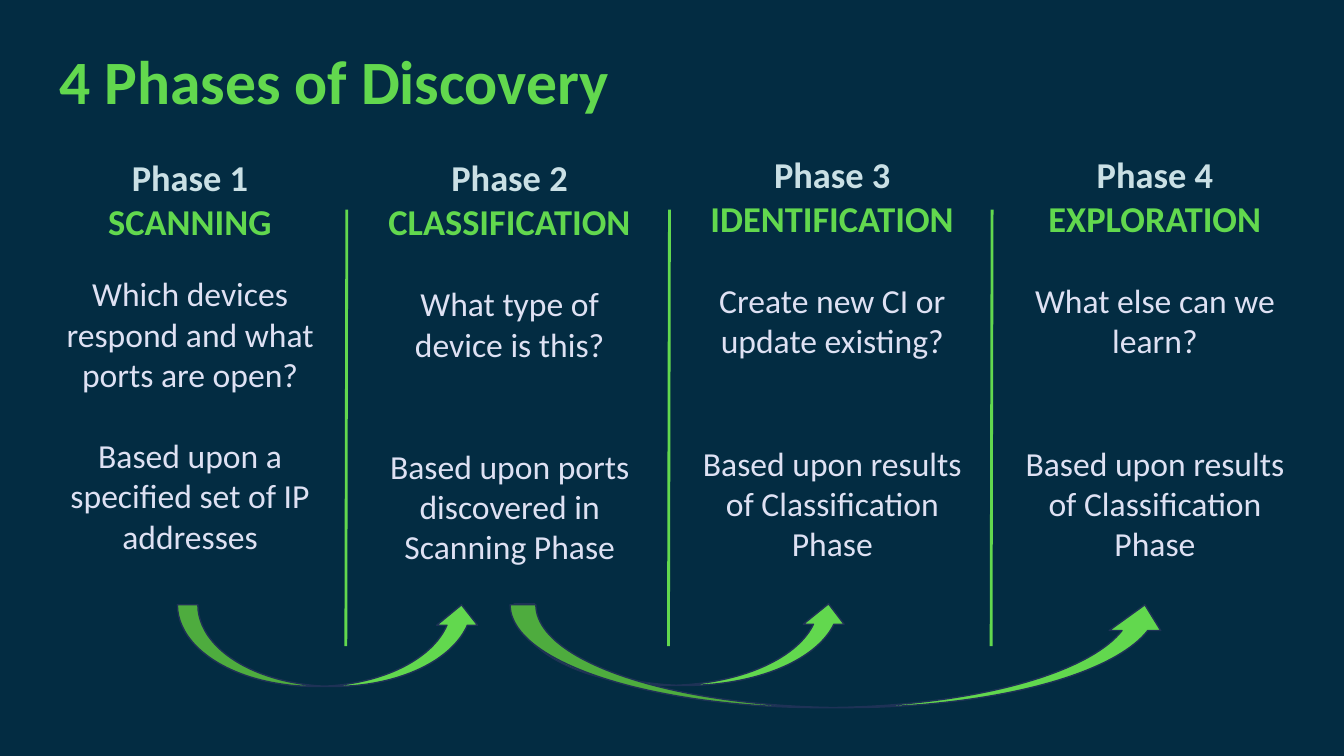
from lxml.etree import SubElement
from pptx import Presentation
from pptx.dml.color import RGBColor
from pptx.enum.shapes import MSO_CONNECTOR as Link, MSO_SHAPE as Form
from pptx.enum.text import PP_ALIGN as Align
from pptx.oxml.ns import qn
from pptx.util import Inches, Pt

GREEN, PALE, LILAC = "62D84E", "CAE0E5", "DEE1F3"
NAVY, EDGE = "032C42", "1E3256"

# left, top inset, name, question, basis, space before question and basis
PHASES = [
    (0.49, 0.08, "SCANNING", "Which devices respond and what ports are open?",
     "Based upon a specified set of IP addresses", 22, 29),
    (3.66, 0.08, "CLASSIFICATION", "What type of device is this?",
     "Based upon ports discovered in Scanning Phase", 29, 58.5),
    (6.86, 0.05, "IDENTIFICATION", "Create new CI or update existing?",
     "Based upon results of Classification Phase", 29, 58.5),
    (10.06, 0.05, "EXPLORATION", "What else can we learn?",
     "Based upon results of Classification Phase", 29, 58.5),
]
ARROWS = [(1.76, 6, 3.02, 0.81), (5.1, 5.99, 3.32, 0.81), (5.06, 6, 6.55, 1.02)]


def color(code):
    return RGBColor.from_string(code)


def add_box(slide, left, top, width, height, inset=0.05):
    box = slide.shapes.add_textbox(*map(Inches, (left, top, width, height)))
    frame = box.text_frame
    frame.word_wrap = True
    frame.margin_top = Inches(inset)
    return frame


def add_run(para, text, size, code, bold=False):
    run = para.add_run()
    run.text = text
    font = run.font
    font.name, font.size, font.bold = "Calibri", Pt(size), bold
    font.color.rgb = color(code)


def add_title(slide, text):
    para = add_box(slide, 0.49, 0.46, 5.78, 0.81).paragraphs[0]
    para.line_spacing = 0.9
    add_run(para, text, 44, GREEN, True)


def add_phase(slide, number, left, inset, name, question, basis, gap, rest):
    frame = add_box(slide, left, 1.46, 2.79, 5.37, inset)
    lines = [
        (f"Phase {number}", 26, PALE, True, 0),
        (name, 26, GREEN, True, 0),
        (question, 24, LILAC, False, gap),
        (basis, 24, LILAC, False, rest),
    ]
    for index, (text, size, code, bold, space) in enumerate(lines):
        para = frame.add_paragraph() if index else frame.paragraphs[0]
        para.alignment = Align.CENTER
        para.space_before = Pt(space)
        add_run(para, text, size, code, bold)


def add_rule(slide, left):
    ends = map(Inches, (left, 2.08, left - 0.01, 6.41))
    rule = slide.shapes.add_connector(Link.STRAIGHT, *ends)
    rule.line.color.rgb = color(GREEN)
    rule.line.width = Pt(2)
    SubElement(rule.element.spPr, qn("a:effectLst"))


def add_arrow(slide, *place):
    arrow = slide.shapes.add_shape(Form.CURVED_UP_ARROW, *map(Inches, place))
    arrow.shadow.inherit = False
    arrow.fill.solid()
    arrow.fill.fore_color.rgb = color(GREEN)
    arrow.line.color.rgb = color(EDGE)
    arrow.line.width = Pt(1)


def main():
    deck = Presentation()
    deck.slide_width, deck.slide_height = Inches(13.33), Inches(7.5)
    slide = deck.slides.add_slide(deck.slide_layouts[6])
    fill = slide.background.fill
    fill.solid()
    fill.fore_color.rgb = color(NAVY)

    add_title(slide, "4 Phases of Discovery")
    for number, phase in enumerate(PHASES, 1):
        add_phase(slide, number, *phase)
    for index in range(len(PHASES) - 1):
        add_rule(slide, 3.44 + 3.2 * index)
    for place in ARROWS:
        add_arrow(slide, *place)
    deck.save("out.pptx")


if __name__ == "__main__":
    main()
